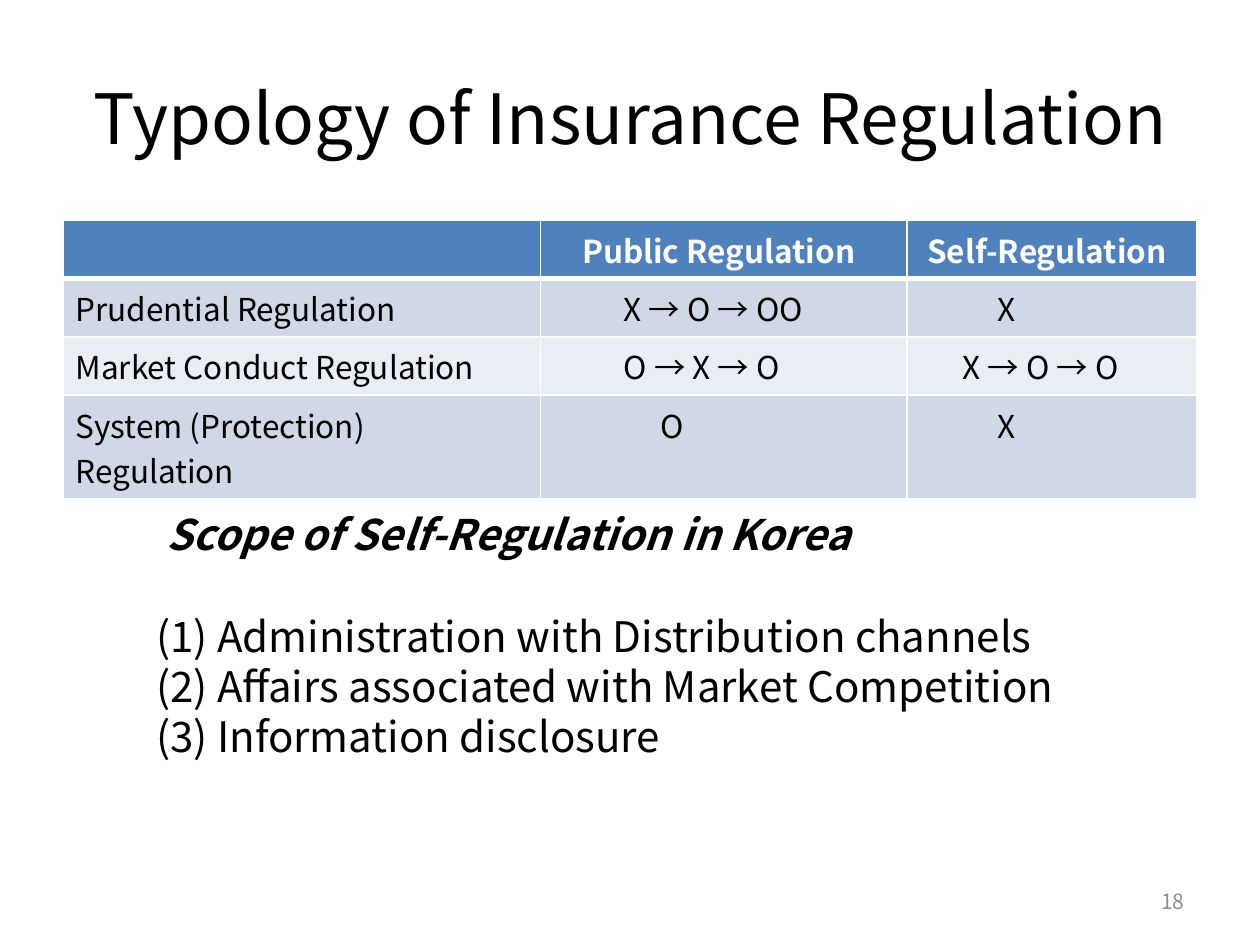
"""Build the slide on the typology of insurance regulation."""
from dataclasses import dataclass

from lxml.etree import SubElement
from pptx import Presentation
from pptx.dml.color import RGBColor
from pptx.enum.text import MSO_ANCHOR, PP_ALIGN
from pptx.oxml.ns import qn
from pptx.util import Inches, Pt


@dataclass(frozen=True)
class Theme:
    font: str = "Noto Sans CJK KR"
    ink: str = "000000"
    paper: str = "FFFFFF"
    muted: str = "8C8C8C"
    header: str = "4F81BD"
    bands: tuple = ("D0D8E8", "E9EDF4")
    title_size: float = 39.6
    body_size: float = 24
    table_size: float = 18
    number_size: float = 12


THEME = Theme()
WIDTH, HEIGHT = 10, 7.5
MARGIN = WIDTH * 0.05
CELL_INSET = 0.1
HEADING_INDENT = 0.08
HEADING_GAP = 29

TITLE = "Typology of Insurance Regulation"
COLUMNS = [3.79, 2.91, 2.3]
ROW_HEIGHT = 0.41
ROWS = [
    [("", 0), ("Public Regulation", 0.23), ("Self-Regulation", 0.06)],
    [("Prudential Regulation", 0), ("X → O → OO", 0.56), ("X", 0.62)],
    [("Market Conduct Regulation", 0), ("O → X → O", 0.56), ("X → O → O", 0.34)],
    [("System (Protection) Regulation", 0), ("O", 0.85), ("X", 0.62)],
]
SCOPE_TITLE = "Scope of Self-Regulation in Korea"
SCOPE_ITEMS = [
    "(1) Administration with Distribution channels",
    "(2) Affairs associated with Market Competition",
    "(3) Information disclosure",
]
PAGE_NUMBER = "18"


def write(para, text, size, color=THEME.ink, bold=False, italic=False, align=PP_ALIGN.LEFT):
    para.alignment = align
    span = para.add_run()
    span.text = text
    font = span.font
    font.name, font.size, font.bold, font.italic = THEME.font, Pt(size), bold, italic
    font.color.rgb = RGBColor.from_string(color)


def set_borders(cell, widths):
    properties = cell._tc.get_or_add_tcPr()
    for position, (side, width) in enumerate(widths.items()):
        line = properties.makeelement(qn(f"a:{side}"), {"w": str(Pt(width))})
        fill = SubElement(line, qn("a:solidFill"))
        SubElement(fill, qn("a:srgbClr"), val=THEME.paper)
        properties.insert(position, line)


def add_title(page):
    title = page.shapes.title
    title.left, title.top = Inches(MARGIN), Inches(HEIGHT * 0.04)
    title.width, title.height = Inches(WIDTH - 2 * MARGIN), Inches(1.25)
    title.text_frame.vertical_anchor = MSO_ANCHOR.MIDDLE
    write(title.text_frame.paragraphs[0], TITLE, THEME.title_size, align=PP_ALIGN.CENTER)


def add_regulation_table(page):
    table = page.shapes.add_table(
        len(ROWS), len(COLUMNS), Inches(MARGIN), Inches(1.75),
        Inches(sum(COLUMNS)), Inches(ROW_HEIGHT * len(ROWS))).table
    for column, width in zip(table.columns, COLUMNS):
        column.width = Inches(width)
    for row_index, row in enumerate(ROWS):
        is_header = row_index == 0
        table.rows[row_index].height = Inches(ROW_HEIGHT)
        fill = THEME.header if is_header else THEME.bands[(row_index - 1) % 2]
        widths = {"lnL": 1, "lnR": 1, "lnT": 3 if row_index == 1 else 1, "lnB": 3 if is_header else 1}
        for column_index, (text, indent) in enumerate(row):
            cell = table.cell(row_index, column_index)
            cell.margin_left = Inches(CELL_INSET + indent)
            cell.fill.solid()
            cell.fill.fore_color.rgb = RGBColor.from_string(fill)
            set_borders(cell, widths)
            if text:
                write(cell.text_frame.paragraphs[0], text, THEME.table_size,
                      color=THEME.paper if is_header else THEME.ink, bold=is_header)


def add_text_frame(page, left, top, width, height):
    box = page.shapes.add_textbox(*map(Inches, (left, top, width, height)))
    box.text_frame.word_wrap = True
    return box.text_frame


def add_scope(page):
    frame = add_text_frame(page, 1.14, 3.99, 7.87, 2.12)
    heading = frame.paragraphs[0]
    heading.space_after = Pt(HEADING_GAP)
    write(heading, SCOPE_TITLE, THEME.body_size, bold=True, italic=True)
    heading._p.get_or_add_pPr().set("marL", str(Inches(HEADING_INDENT)))
    for item in SCOPE_ITEMS:
        write(frame.add_paragraph(), item, THEME.body_size)


def add_page_number(page):
    frame = add_text_frame(page, 7.17, 6.95, 2.33, 0.4)
    frame.vertical_anchor = MSO_ANCHOR.MIDDLE
    write(frame.paragraphs[0], PAGE_NUMBER, THEME.number_size,
          color=THEME.muted, align=PP_ALIGN.RIGHT)


def main():
    deck = Presentation()
    deck.slide_width, deck.slide_height = Inches(WIDTH), Inches(HEIGHT)
    page = deck.slides.add_slide(deck.slide_layouts[5])
    add_title(page)
    add_regulation_table(page)
    add_scope(page)
    add_page_number(page)
    deck.save("out.pptx")


if __name__ == "__main__":
    main()
